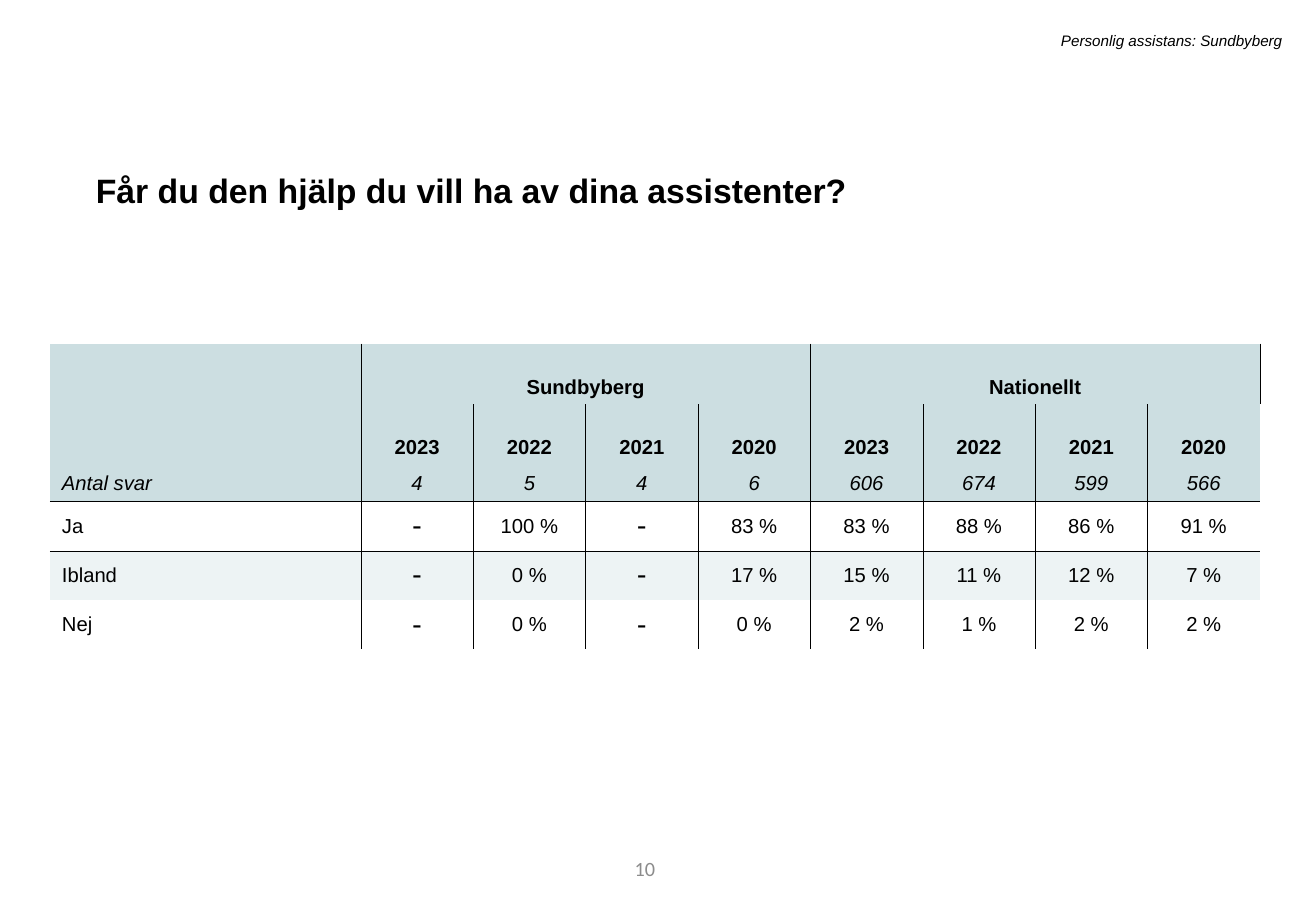
from typing import NamedTuple

from lxml.etree import SubElement
from pptx import Presentation
from pptx.dml.color import RGBColor
from pptx.enum.text import MSO_ANCHOR, PP_ALIGN
from pptx.oxml.ns import qn
from pptx.util import Inches, Pt

BLACK = "000000"
GREY = "8C8C8C"
HEADER_FILL = "CCDEE1"
BAND_FILL = "EDF3F4"
NO_STYLE_NO_GRID = "{2D5ABB26-0587-4C30-8999-92F81FD0307C}"
YEARS = ["2023", "2022", "2021", "2020"]
GROUPS = ["Sundbyberg", "Nationellt"]
LABEL_WIDTH = 2.56
TABLE_WIDTH = 9.96


class Row(NamedTuple):
    height: float
    values: list[str]
    fill: str | None = None
    anchor: MSO_ANCHOR = MSO_ANCHOR.MIDDLE
    bold: bool = False
    italic: bool = False
    underlined: bool = False


class Label(NamedTuple):
    box: tuple[float, float, float, float]
    text: str
    style: dict
    anchor: MSO_ANCHOR = MSO_ANCHOR.TOP


ROWS = [
    Row(0.5, ["", GROUPS[0], "", "", "", GROUPS[1], "", "", ""],
        HEADER_FILL, MSO_ANCHOR.BOTTOM, bold=True),
    Row(0.5, ["", *YEARS, *YEARS], HEADER_FILL, MSO_ANCHOR.BOTTOM, bold=True),
    Row(0.3, ["Antal svar", "4", "5", "4", "6", "606", "674", "599", "566"],
        HEADER_FILL, italic=True, underlined=True),
    Row(0.4, ["Ja", "-", "100 %", "-", "83 %", "83 %", "88 %", "86 %", "91 %"]),
    Row(0.4, ["Ibland", "-", "0 %", "-", "17 %", "15 %", "11 %", "12 %", "7 %"], BAND_FILL),
    Row(0.4, ["Nej", "-", "0 %", "-", "0 %", "2 %", "1 %", "2 %", "2 %"]),
]

LABELS = [
    Label((3.05, 6.95, 2.44, 0.4), "10",
          dict(size=12, font="Calibri", color=GREY, align=PP_ALIGN.RIGHT), MSO_ANCHOR.MIDDLE),
    Label((0.69, 1.28, 9.4, 0.47), "Får du den hjälp du vill ha av dina assistenter?",
          dict(size=20, bold=True, line_spacing=1.2, space_before=10)),
    Label((1.79, 0.21, 8.86, 0.25), "Personlig assistans: Sundbyberg",
          dict(size=9, italic=True, align=PP_ALIGN.RIGHT)),
]


def rgb(color: str) -> RGBColor:
    return RGBColor.from_string(color)


def write(tf, text: str, *, size: float = 12, font: str = "Arial", color: str = BLACK,
          bold: bool = False, italic: bool = False, align=PP_ALIGN.LEFT,
          line_spacing: float = 1.0, space_before: float = 0) -> None:
    p = tf.paragraphs[0]
    p.alignment = align
    p.line_spacing = line_spacing
    p.space_before = Pt(space_before)
    r = p.add_run()
    r.text = text
    r.font.size = Pt(size)
    r.font.name = font
    r.font.bold = bold
    r.font.italic = italic
    r.font.color.rgb = rgb(color)


def add_label(s, label: Label) -> None:
    sp = s.shapes.add_textbox(*map(Inches, label.box))
    tf = sp.text_frame
    tf.word_wrap = True
    tf.vertical_anchor = label.anchor
    write(tf, label.text, **label.style)


def add_borders(cell, sides: list[str]) -> None:
    tc_pr = cell._tc.get_or_add_tcPr()
    for side in sides:
        ln = SubElement(tc_pr, qn(f"a:ln{side}"), w=str(Pt(0.25)))
        fill = SubElement(ln, qn("a:solidFill"))
        SubElement(fill, qn("a:srgbClr"), val=BLACK)


def border_sides(i: int, j: int) -> list[str]:
    last = len(ROWS[i].values) - 1
    sides = {
        "L": j > 0,
        "R": j < last or i == 0,
        "T": i > 0 and ROWS[i - 1].underlined,
        "B": ROWS[i].underlined,
    }
    return [side for side, shown in sides.items() if shown]


def fill_cell(cell, row: Row, j: int) -> None:
    cell.vertical_anchor = row.anchor
    if row.fill:
        cell.fill.solid()
        cell.fill.fore_color.rgb = rgb(row.fill)
    else:
        cell.fill.background()
    text = row.values[j]
    if text:
        dash = dict(size=18, font="Calibri") if text == "-" else {}
        align = PP_ALIGN.CENTER if j else PP_ALIGN.LEFT
        write(cell.text_frame, text, bold=row.bold, italic=row.italic, align=align, **dash)


def add_answers(s) -> None:
    columns = len(ROWS[0].values)
    height = sum(row.height for row in ROWS)
    frame = s.shapes.add_table(len(ROWS), columns, Inches(0.41), Inches(2.83),
                               Inches(TABLE_WIDTH), Inches(height))
    table = frame.table
    table.first_row = False
    table.horz_banding = False
    table._tbl.tblPr.find(qn("a:tableStyleId")).text = NO_STYLE_NO_GRID

    value_width = (TABLE_WIDTH - LABEL_WIDTH) / (columns - 1)
    for j, column in enumerate(table.columns):
        column.width = Inches(value_width if j else LABEL_WIDTH)
    for g in range(len(GROUPS)):
        first = 1 + g * len(YEARS)
        table.cell(0, first).merge(table.cell(0, first + len(YEARS) - 1))

    for i, row in enumerate(ROWS):
        table.rows[i].height = Inches(row.height)
        for j in range(columns):
            cell = table.cell(i, j)
            add_borders(cell, border_sides(i, j))
            fill_cell(cell, row, j)


def main() -> None:
    prs = Presentation()
    prs.slide_width = Inches(10.83)
    prs.slide_height = Inches(7.5)
    s = prs.slides.add_slide(prs.slide_layouts[6])
    add_answers(s)
    for label in LABELS:
        add_label(s, label)
    prs.save("out.pptx")


if __name__ == "__main__":
    main()
